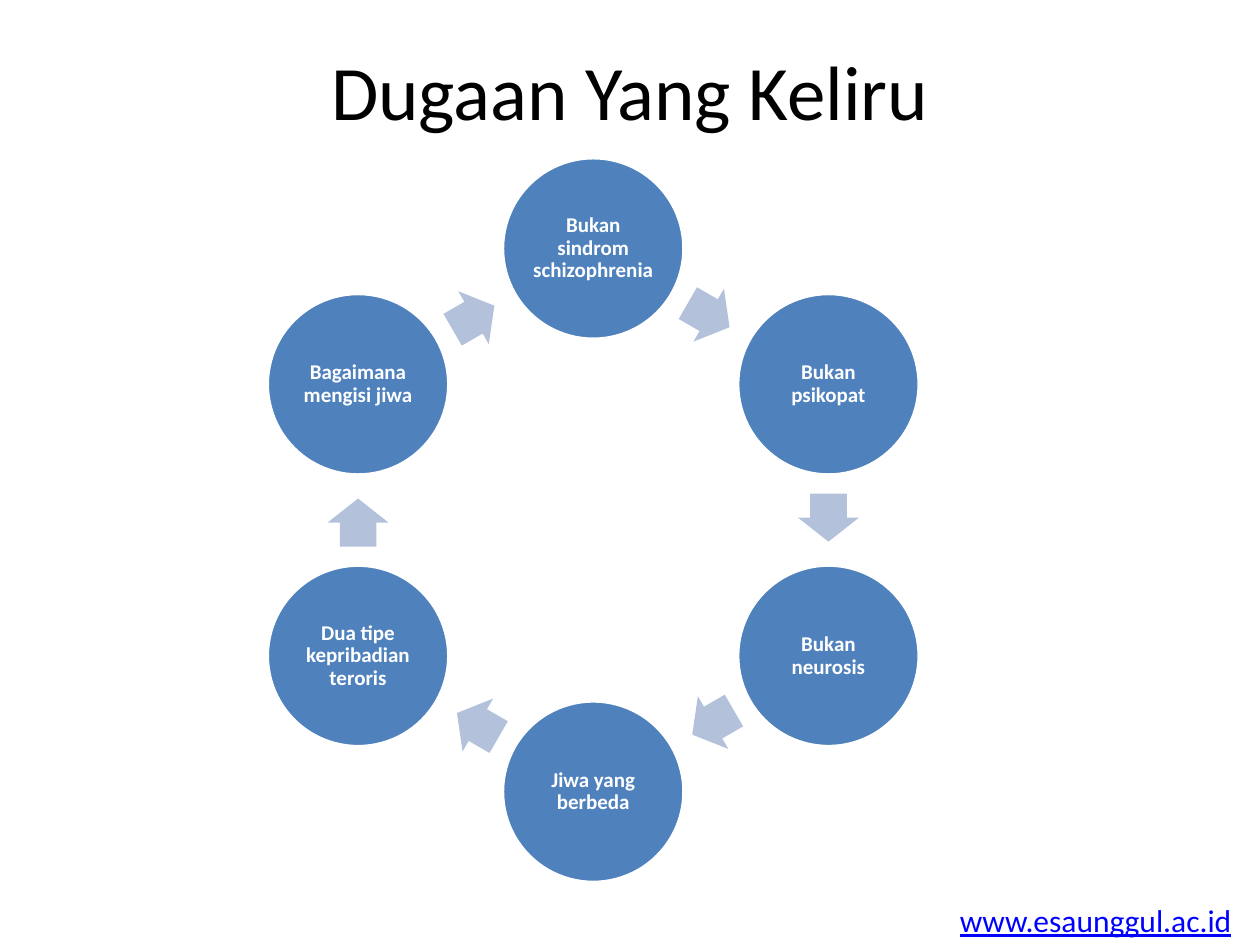
from math import cos, radians, sin

from pptx import Presentation
from pptx.dml.color import RGBColor as Rgb
from pptx.enum.shapes import MSO_SHAPE as Kind
from pptx.enum.text import MSO_ANCHOR as Anchor, MSO_AUTO_SIZE as Auto, PP_ALIGN as Align
from pptx.util import Cm, Pt

HUES = {"ink": "000000", "link": "0000FF", "disc": "4F81BD", "arrow": "B3C1DB", "white": "FFFFFF"}
STEPS = [
    "Bukan sindrom schizophrenia",
    "Bukan psikopat",
    "Bukan neurosis",
    "Jiwa yang berbeda",
    "Dua tipe kepribadian teroris",
    "Bagaimana mengisi jiwa",
]
PAD = 0.05


def hue(name):
    return Rgb.from_string(HUES[name])


def apply(item, form):
    for key, value in form.items():
        setattr(item, key, value)


def write(frame, text, color, form, align=Align.CENTER):
    para = frame.paragraphs[0]
    para.alignment = align
    run = para.add_run()
    run.text = text
    apply(run.font, {"name": "Calibri", **form})
    run.font.color.rgb = hue(color)
    return para


def add_label(slide, box, text, color, form, align, frame_form):
    frame = slide.shapes.add_textbox(*map(Cm, box)).text_frame
    apply(frame, frame_form)
    write(frame, text, color, form, align)


def add_part(slide, kind, mid, size, color):
    (x, y), (wide, high) = mid, size
    box = x - wide / 2, y - high / 2, wide, high
    part = slide.shapes.add_shape(kind, *map(Cm, box))
    part.shadow.inherit = False
    part.fill.solid()
    part.fill.fore_color.rgb = hue(color)
    return part


def add_disc(slide, mid, size, text):
    disc = add_part(slide, Kind.OVAL, mid, (size, size), "disc")
    disc.line.color.rgb = hue("white")
    disc.line.width = Pt(2)
    frame = disc.text_frame
    sides = ("left", "top", "right", "bottom")
    apply(frame, {f"margin_{side}": Cm(PAD) for side in sides})
    apply(frame, {"word_wrap": True, "vertical_anchor": Anchor.MIDDLE})
    para = write(frame, text, "white", {"size": Pt(12), "bold": True})
    para.line_spacing = 0.9


def add_arrow(slide, mid, size, turn):
    arrow = add_part(slide, Kind.RIGHT_ARROW, mid, size, "arrow")
    arrow.line.fill.background()
    arrow.adjustments[0] = 0.6
    arrow.adjustments[1] = 0.5
    arrow.rotation = turn


def add_cycle(slide, box, steps, size):
    left, top, wide, high = box
    x, y = left + wide / 2, top + high / 2
    ring = (high - size) / 2
    step = 360 / len(steps)
    reach = ring * cos(radians(step / 2))

    def spot(far, angle, back=0):
        a = radians(angle)
        return x + far * sin(a) + back * -cos(a), y - far * cos(a) - back * sin(a)

    for i, text in enumerate(steps):
        add_disc(slide, spot(ring, i * step), size, text)
        turn = (i + 0.5) * step
        add_arrow(slide, spot(reach, turn, PAD), (0.97, 1.23), turn)


def main():
    deck = Presentation()
    apply(deck, {"slide_width": Cm(25.4), "slide_height": Cm(19.05)})
    slide = deck.slides.add_slide(deck.slide_layouts[6])
    add_label(slide, (19.1, 18.03, 6.05, 1.02), "www.esaunggul.ac.id", "link",
              {"size": Pt(18), "underline": True}, Align.LEFT,
              {"word_wrap": False, "auto_size": Auto.SHAPE_TO_FIT_TEXT})
    add_label(slide, (1.27, 0.76, 22.86, 3.18), "Dugaan Yang Keliru", "ink",
              {"size": Pt(44)}, Align.CENTER,
              {"word_wrap": True, "vertical_anchor": Anchor.TOP})
    add_cycle(slide, (5.38, 3.18, 13.16, 14.61), STEPS, 3.66)
    deck.save("out.pptx")


if __name__ == "__main__":
    main()
